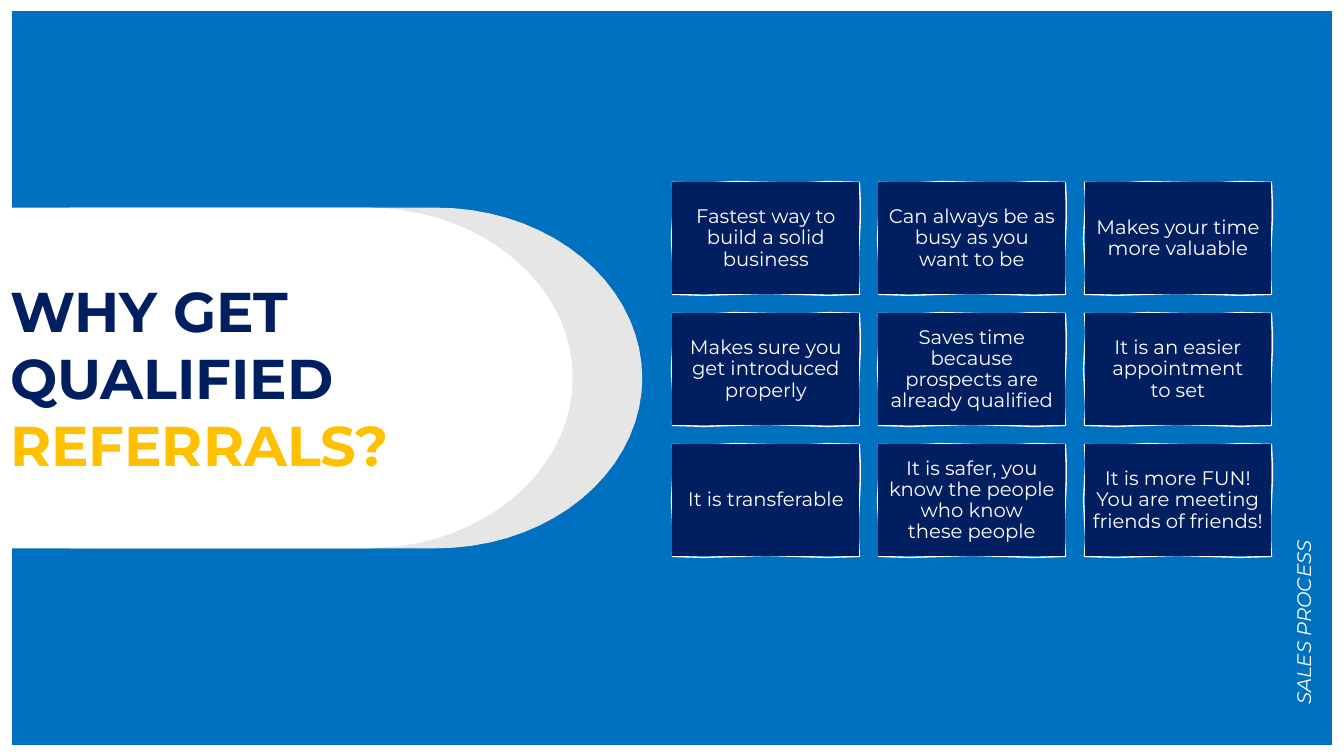
import copy
import math
from dataclasses import dataclass

from pptx import Presentation
from pptx.dml.color import RGBColor
from pptx.enum import shapes, text
from pptx.oxml.ns import qn
from pptx.util import Inches, Pt


@dataclass(frozen=True)
class Theme:
    blue: str = "0070C0"
    navy: str = "001F60"
    gold: str = "FFC000"
    grey: str = "E7E6E6"
    white: str = "FFFFFF"
    font: str = "Montserrat"
    title: int = 40
    body: int = 14


THEME = Theme()
REASONS = [
    "Fastest way to build a solid business",
    "Can always be as busy as you\vwant to be",
    "Makes your time more valuable",
    "Makes sure you get introduced properly",
    "Saves time because prospects are already qualified",
    "It is an easier appointment\vto set",
    "It is transferable",
    "It is safer, you know the people who know\vthese people",
    "It is more FUN! You are meeting friends of friends!",
]


def style(p, size, color, bold=False, italic=False):
    p.font.name = THEME.font
    p.font.size = Pt(size)
    p.font.bold = bold
    p.font.italic = italic
    p.font.color.rgb = RGBColor.from_string(color)


def paint(sp, color):
    sp.shadow.inherit = False
    sp.fill.solid()
    sp.fill.fore_color.rgb = RGBColor.from_string(color)
    sp.line.fill.background()


def outline(s, points):
    points = [(Inches(x), Inches(y)) for x, y in points]
    builder = s.shapes.build_freeform(*points[0])
    builder.add_line_segments(points[1:], close=True)
    return builder.convert_to_shape()


def add_backdrop(s, x, y, w, h):
    sp = s.shapes.add_shape(
        shapes.MSO_SHAPE.RECTANGLE, Inches(x), Inches(y), Inches(w), Inches(h))
    paint(sp, THEME.blue)


def add_tongue(s, x, y, w, h, color, curve=2.04, steps=36):
    angles = [math.pi * (i / steps - 0.5) for i in range(steps + 1)]
    arc = [(x + w - curve + curve * math.cos(a), y + h / 2 + h / 2 * math.sin(a))
           for a in angles]
    paint(outline(s, [(x, y), *arc, (x, y + h)]), color)


def add_title(s, x, y, w, h):
    title = s.shapes.title
    title.left, title.top = Inches(x), Inches(y)
    title.width, title.height = Inches(w), Inches(h)
    title.element.getparent().append(title.element)
    tf = title.text_frame
    tf.text = "WHY GET\nQUALIFIED\nREFERRALS?"
    tf.word_wrap = False
    tf.auto_size = text.MSO_AUTO_SIZE.NONE
    tf.vertical_anchor = text.MSO_ANCHOR.TOP
    for p, color in zip(tf.paragraphs, (THEME.navy, THEME.navy, THEME.gold)):
        p.alignment = text.PP_ALIGN.LEFT
        p.space_before = Pt(0)
        style(p, THEME.title, color, bold=True)


def add_card(s, x, y, w, h, reason, wobble=0.01, steps=6):
    def wave(t, halves):
        return wobble * math.sin(halves * math.pi * t)

    ts = [i / steps for i in range(steps)]
    top = [(x + w * t, y + wave(t, 4)) for t in ts]
    right = [(x + w + wave(t, 2), y + h * t) for t in ts]
    bottom = [(x + w - w * t, y + h + wave(t, 3)) for t in ts]
    left = [(x + wave(t, 3), y + h - h * t) for t in ts]
    sp = outline(s, top + right + bottom + left)
    paint(sp, THEME.navy)
    sp.line.color.rgb = RGBColor.from_string(THEME.white)
    sp.line.width = Pt(1)

    edge = next(sp.element.iter(qn("a:path")))
    body = copy.deepcopy(edge)
    edge.set("fill", "none")
    body.set("stroke", "0")
    for i, segment in enumerate(list(body)[:-1]):
        if i % steps:
            body.remove(segment)
    edge.addnext(body)

    tf = sp.text_frame
    tf.word_wrap = True
    tf.vertical_anchor = text.MSO_ANCHOR.MIDDLE
    tf.margin_left = tf.margin_right = tf.margin_top = tf.margin_bottom = Inches(0.07)
    p = tf.paragraphs[0]
    p.text = reason
    p.alignment = text.PP_ALIGN.CENTER
    p.line_spacing = 0.9
    style(p, THEME.body, THEME.white)


def add_reasons(s, x, y, w, h, columns=3, gap=0.19):
    rows = len(REASONS) // columns
    card_w = (w - gap * (columns - 1)) / columns
    card_h = (h - gap * (rows - 1)) / rows
    for i, reason in enumerate(REASONS):
        row, column = divmod(i, columns)
        add_card(s, x + column * (card_w + gap), y + row * (card_h + gap),
                 card_w, card_h, reason)


def add_section_label(s, x, y, w, h):
    sp = s.shapes.add_textbox(Inches(x), Inches(y), Inches(w), Inches(h))
    sp.rotation = 270
    tf = sp.text_frame
    tf.word_wrap = True
    p = tf.paragraphs[0]
    p.text = "SALES PROCESS"
    style(p, THEME.body, THEME.white, italic=True)


def add_referrals_slide(prs):
    s = prs.slides.add_slide(prs.slide_layouts[5])
    add_backdrop(s, 0.12, 0.11, 13.09, 7.28)
    add_tongue(s, 0.69, 2.06, 5.68, 3.38, THEME.grey)
    add_tongue(s, 0, 2.06, 5.68, 3.38, THEME.white)
    add_title(s, 0, 2.69, 4, 2.12)
    add_reasons(s, 6.67, 1.81, 5.94, 3.71)
    add_section_label(s, 11.78, 5.77, 2.3, 0.34)


def main():
    prs = Presentation()
    prs.slide_width, prs.slide_height = Inches(13.33), Inches(7.5)
    add_referrals_slide(prs)
    prs.save("out.pptx")


if __name__ == "__main__":
    main()
